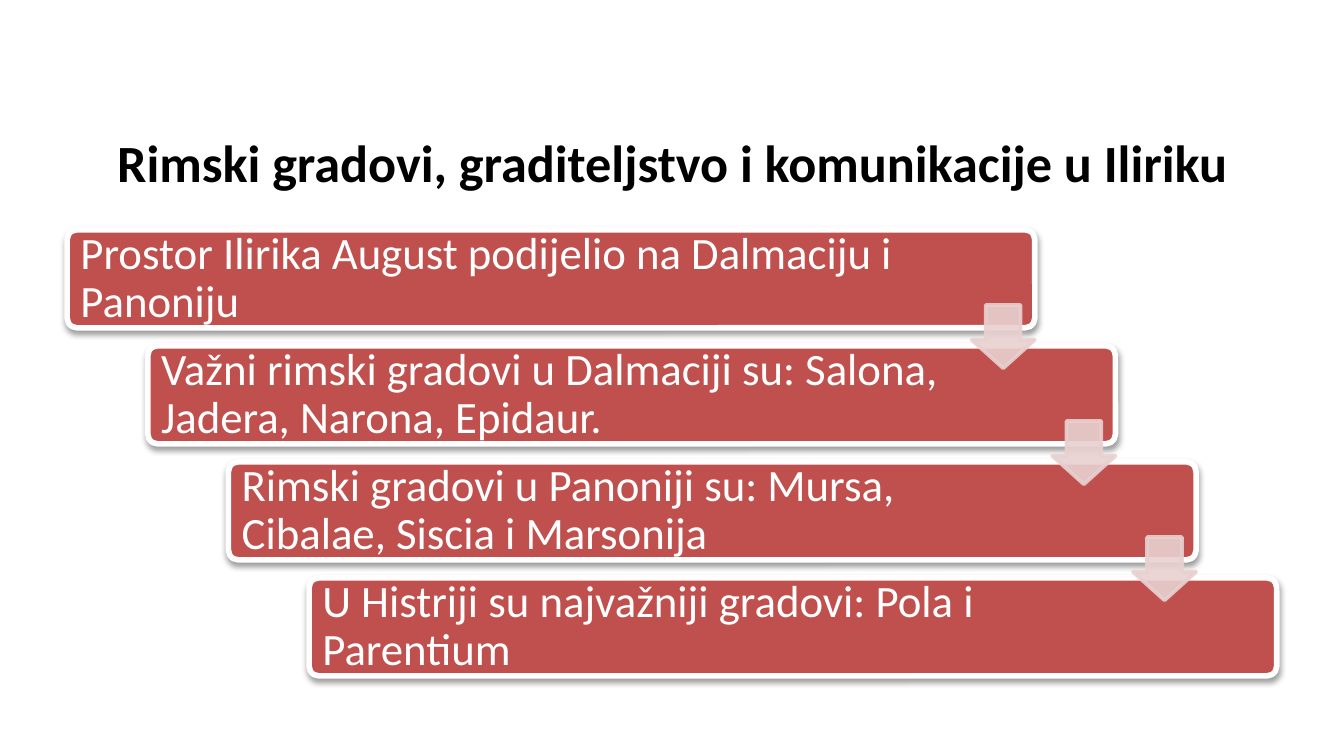
from dataclasses import dataclass

from lxml.etree import SubElement as Sub
from pptx import Presentation
from pptx.dml.color import RGBColor as Rgb
from pptx.enum.shapes import MSO_SHAPE as Shape
from pptx.enum.text import MSO_ANCHOR as Anchor, PP_ALIGN as Align
from pptx.oxml.ns import qn
from pptx.util import Inches, Pt

HUES = {"ink": "000000", "bar": "C0504D", "pale": "E8D0D0", "white": "FFFFFF"}
FONT = "Calibri"
WIDE = 10
HIGH = WIDE * 9 / 16
LEFT, TOP = 0.5, 1.71
COL, ROW = 0.6, (4.3 - 1.71) / 3
BAR_W, BAR_H = 12 * COL, 0.73
HEAD = 0.47


@dataclass
class Step:
    text: str
    width: float


STEPS = [
    Step("Prostor Ilirika August podijelio na Dalmaciju i Panoniju", 6.39),
    Step("Važni rimski gradovi u Dalmaciji su: Salona, Jadera, Narona, Epidaur.", 6.12),
    Step("Rimski gradovi u Panoniji su: Mursa, Cibalae, Siscia i Marsonija", 6.13),
    Step("U Histriji su najvažniji gradovi: Pola i Parentium", 6.12),
]


def hue(name: str) -> Rgb:
    return Rgb.from_string(HUES[name])


def place(x: float, y: float, w: float, h: float) -> list:
    return [Inches(v) for v in (x, y, w, h)]


def write(frame, text: str, size: float, name: str, align, bold: bool = False) -> None:
    frame.word_wrap = True
    frame.vertical_anchor = Anchor.MIDDLE
    para = frame.paragraphs[0]
    para.text = text
    para.alignment = align
    para.line_spacing = 0.9
    font = para.font
    font.name, font.size, font.bold = FONT, Pt(size), bold
    font.color.rgb = hue(name)


def draw(slide, kind, box: list, fill: str, edge: str, width: float, adjust: list):
    shape = slide.shapes.add_shape(kind, *box)
    for i, value in enumerate(adjust):
        shape.adjustments[i] = value
    shape.fill.solid()
    shape.fill.fore_color.rgb = hue(fill)
    shape.line.color.rgb = hue(edge)
    shape.line.width = Pt(width)
    shape.shadow.inherit = False
    return shape


def shade(shape) -> None:
    effects = shape._element.spPr.find(qn("a:effectLst"))
    outer = Sub(effects, qn("a:outerShdw"), blurRad=str(Pt(3.1)), dist=str(Pt(1.6)),
                dir="5400000", rotWithShape="0")
    color = Sub(outer, qn("a:srgbClr"), val=HUES["ink"])
    Sub(color, qn("a:alpha"), val="38000")


def add_step(slide, step: Step, row: int) -> None:
    x, y = LEFT + row * COL, TOP + row * ROW
    box = place(x, y, BAR_W, BAR_H)
    shade(draw(slide, Shape.ROUNDED_RECTANGLE, box, "bar", "white", 3, [0.1]))
    frame = slide.shapes.add_textbox(*place(x, y, step.width, BAR_H)).text_frame
    frame.margin_left = frame.margin_right = Inches(0.1)
    frame.margin_top = frame.margin_bottom = Inches(0.1)
    write(frame, step.text, 24, "white", Align.LEFT)


def add_arrow(slide, row: int) -> None:
    x = LEFT + row * COL + BAR_W - HEAD
    y = TOP + row * ROW + 0.56
    arrow = draw(slide, Shape.DOWN_ARROW, place(x, y, HEAD, HEAD),
                 "pale", "pale", 2, [0.55, 0.45])
    for color in arrow._element.spPr.iter(qn("a:srgbClr")):
        Sub(color, qn("a:alpha"), val="90000")


def main() -> None:
    deck = Presentation()
    deck.slide_width, deck.slide_height = Inches(WIDE), Inches(HIGH)
    slide = deck.slides.add_slide(deck.slide_layouts[5])
    title = slide.shapes.title
    title.left, title.top, title.width, title.height = place(
        LEFT, 0.15 * HIGH, 0.9 * WIDE, 0.78)
    write(title.text_frame, "Rimski gradovi, graditeljstvo i komunikacije u Iliriku",
          28, "ink", Align.CENTER, True)
    for row, step in enumerate(STEPS):
        add_step(slide, step, row)
    for row in range(len(STEPS) - 1):
        add_arrow(slide, row)
    deck.save("out.pptx")


if __name__ == "__main__":
    main()
